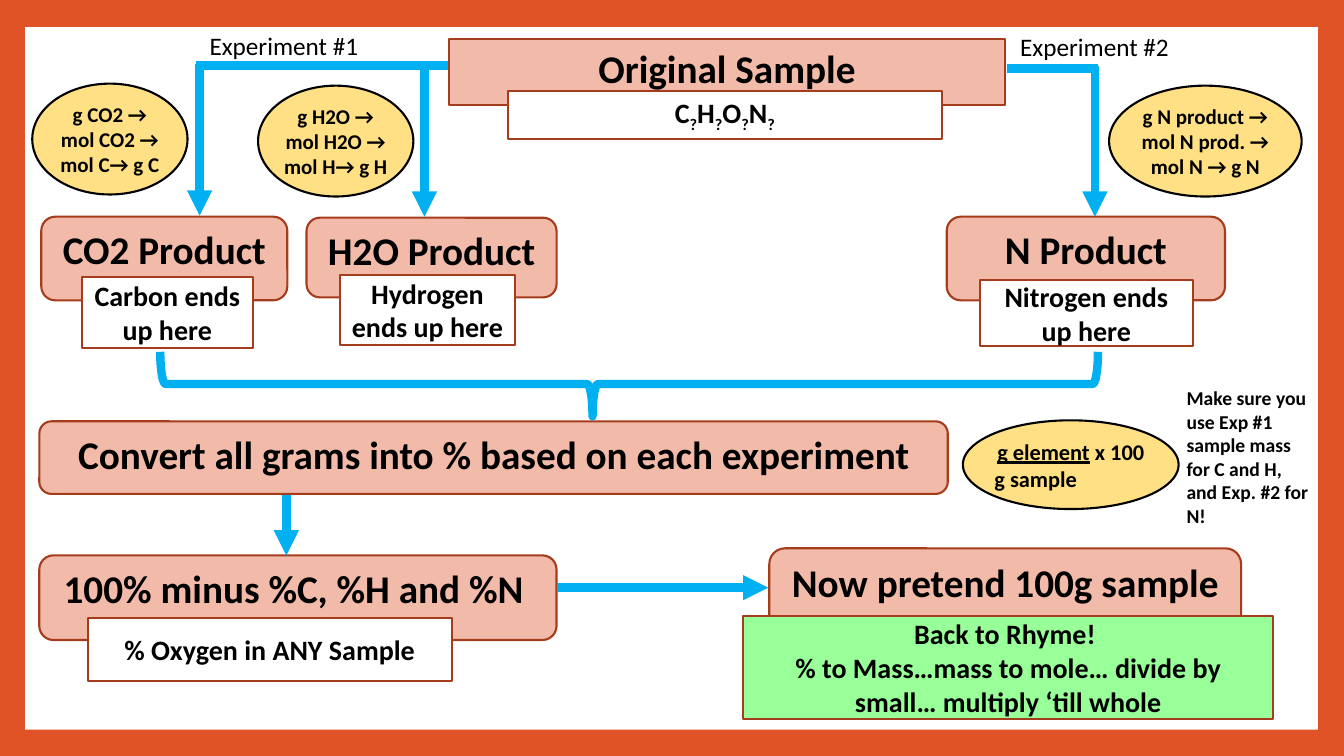
import dataclasses

import lxml.etree
import pptx
import pptx.dml.color
import pptx.enum.shapes
import pptx.enum.text
import pptx.oxml
import pptx.oxml.ns
import pptx.util

Inches = pptx.util.Inches
Pt = pptx.util.Pt
Kind = pptx.enum.shapes.MSO_SHAPE
Align = pptx.enum.text.PP_ALIGN
Anchor = pptx.enum.text.MSO_ANCHOR
Fit = pptx.enum.text.MSO_AUTO_SIZE
qn = pptx.oxml.ns.qn


@dataclasses.dataclass(frozen=True)
class Theme:
    font: str = "Calibri"
    frame: str = "DF5327"
    paper: str = "FFFFFF"
    step: str = "F2BAA9"
    edge: str = "A53D1D"
    hint: str = "FFE085"
    rhyme: str = "99FF99"
    flow: str = "00B0F0"
    ink: str = "000000"
    head: int = 28
    body: int = 20
    label: int = 18
    ratio: int = 16
    unit: int = 15
    note: int = 14
    thin: float = 1.5
    thick: float = 6


def rgb(code):
    return pptx.dml.color.RGBColor.from_string(code)


def write(shape, text, *, size, font, color, bold=True, align=Align.CENTER,
          anchor=Anchor.MIDDLE, inset=None, fit=Fit.NONE):
    """Text is a string, or a list of (alignment, [(words, mark), ...])."""
    frame = shape.text_frame
    frame.word_wrap, frame.auto_size = True, fit
    frame.vertical_anchor = anchor
    if inset is not None:
        frame.margin_left = frame.margin_right = Inches(inset)
        frame.margin_top = frame.margin_bottom = Inches(inset)
    if isinstance(text, str):
        text = [(align, [(line, "")]) for line in text.split("\n")]
    for row, (side, parts) in enumerate(text):
        para = frame.add_paragraph() if row else frame.paragraphs[0]
        para.alignment = side
        for words, mark in parts:
            run = para.add_run()
            run.text = words
            run.font.name, run.font.size = font, Pt(size)
            run.font.bold = bold
            run.font.color.rgb = rgb(color)
            if mark == "line":
                run.font.underline = True
            elif mark == "sub":
                run.font._element.set("baseline", "-25000")


class Chart:
    """Draws the flow chart's parts on one slide."""

    def __init__(self, slide, theme):
        self.slide, self.theme = slide, theme
        self.shapes = slide.shapes

    def text(self, shape, text, size, **form):
        write(shape, text, size=size, font=self.theme.font,
              color=self.theme.ink, **form)

    def paint(self, shape, fill, edge, width):
        if fill:
            shape.fill.solid()
            shape.fill.fore_color.rgb = rgb(fill)
        else:
            shape.fill.background()
        if edge:
            shape.line.color.rgb = rgb(edge)
            shape.line.width = Pt(width)
        else:
            shape.line.fill.background()

    def shape(self, kind, box, fill, edge=None, width=1.5):
        shape = self.shapes.add_shape(kind, *map(Inches, box))
        shape.shadow.inherit = False
        self.paint(shape, fill, edge, width)
        return shape

    def title(self, box, text):
        title = self.shapes.title
        title.left, title.top, title.width, title.height = map(Inches, box)
        geom = lxml.etree.SubElement(
            title._element.spPr, qn("a:prstGeom"), prst="roundRect")
        lxml.etree.SubElement(geom, qn("a:avLst"))
        self.paint(title, self.theme.step, self.theme.edge, self.theme.thin)
        self.text(title, text, self.theme.head, anchor=Anchor.TOP)
        self.shapes._spTree.append(title._element)  # in front of the panel

    def step(self, box, text):
        shape = self.shape(Kind.ROUNDED_RECTANGLE, box, self.theme.step,
                           self.theme.edge, self.theme.thin)
        self.text(shape, text, self.theme.head, anchor=Anchor.TOP)

    def card(self, box, text, fill=None):
        shape = self.shape(Kind.RECTANGLE, box, fill or self.theme.paper,
                           self.theme.edge, self.theme.thin)
        self.text(shape, text, self.theme.body)

    def hint(self, box, text, size):
        shape = self.shape(Kind.OVAL, box, self.theme.hint,
                           self.theme.ink, self.theme.thin)
        self.text(shape, text, size, inset=0)

    def label(self, box, text, size, bold=False):
        shape = self.shapes.add_textbox(*map(Inches, box))
        self.text(shape, text, size, bold=bold, align=Align.LEFT,
                  anchor=Anchor.TOP, fit=Fit.SHAPE_TO_FIT_TEXT)

    def line(self, ends, arrow=True):
        line = self.shapes.add_connector(
            pptx.enum.shapes.MSO_CONNECTOR.STRAIGHT, *map(Inches, ends))
        line.line.color.rgb = rgb(self.theme.flow)
        line.line.width = Pt(self.theme.thick)
        if arrow:
            lxml.etree.SubElement(line.line._get_or_add_ln(),
                                  qn("a:tailEnd"), type="triangle")
        lxml.etree.SubElement(line._element.spPr, qn("a:effectLst"))

    def brace(self, box, bend, tip):
        shape = self.shape(Kind.LEFT_BRACE, box, None,
                           self.theme.flow, self.theme.thick)
        shape.rotation = 270
        shape.adjustments[0], shape.adjustments[1] = bend, tip


def main():
    deck = pptx.Presentation()
    deck.slide_width, deck.slide_height = Inches(13.33), Inches(7.5)
    slide = deck.slides.add_slide(deck.slide_layouts[5])
    theme = Theme()
    chart = Chart(slide, theme)

    # Frame and white panel
    slide.background.fill.solid()
    slide.background.fill.fore_color.rgb = rgb(theme.frame)
    chart.shape(Kind.RECTANGLE, (0.25, 0.27, 12.82, 6.97), theme.paper)

    # Sample with its unknown formula
    chart.title((4.45, 0.39, 5.52, 0.65), "Original Sample")
    formula = [part for atom in "CHON" for part in ((atom, ""), ("?", "sub"))]
    chart.card((5.04, 0.9, 4.3, 0.48), [(Align.CENTER, formula)])

    # Steps, each with the card that overlaps it
    for box, text, spot, words, fill in (
        ((0.41, 2.15, 2.44, 0.83), "CO2 Product",
         (0.81, 2.75, 1.7, 0.7), "Carbon ends up here", theme.paper),
        ((3.04, 2.16, 2.48, 0.79), "H2O Product",
         (3.37, 2.73, 1.74, 0.69), "Hydrogen ends up here", theme.paper),
        ((9.39, 2.15, 2.76, 0.83), "N Product",
         (9.72, 2.78, 2.11, 0.65), "Nitrogen ends up here", theme.paper),
        ((0.39, 5.51, 5.13, 0.84), "100% minus %C, %H and %N ",
         (0.87, 6.13, 3.61, 0.63), "% Oxygen in ANY Sample", theme.paper),
        ((7.63, 5.44, 4.68, 0.93), "Now pretend 100g sample",
         (7.37, 6.11, 5.26, 1.02), "Back to Rhyme! \n% to Mass…mass to mole… "
         "divide by small… multiply ‘till whole", theme.rhyme),
    ):
        chart.step(box, text)
        chart.card(spot, words, fill)
    chart.step((0.39, 4.18, 9.01, 0.72),
               "Convert all grams into % based on each experiment")

    # Flow lines
    for ends in ((1.94, 0.65, 4.44, 0.65), (9.99, 0.68, 10.89, 0.68)):
        chart.line(ends, arrow=False)
    for ends in ((1.98, 0.64, 1.98, 2.14), (4.21, 0.65, 4.21, 2.15),
                 (10.86, 0.65, 10.86, 2.15), (2.84, 4.91, 2.84, 5.51),
                 (5.52, 5.83, 7.62, 5.83)):
        chart.line(ends)
    chart.brace((5.92, -0.84, 0.64, 9.3), 0.083, 0.461)

    # Labels and side note
    chart.label((1.98, 0.25, 2.43, 0.4), "Experiment #1", theme.label)
    chart.label((10.02, 0.26, 2.23, 0.4), "Experiment #2", theme.label)
    chart.label((11.67, 3.78, 1.46, 1.51), "Make sure you use Exp #1 sample "
                "mass for C and H, and Exp. #2 for N!", theme.note, bold=True)

    # Conversion hints
    chart.hint((9.55, 4.17, 2.14, 0.88),
               [(Align.CENTER, [("g element", "line"), (" x 100", "")]),
                (Align.LEFT, [("g sample", "")])], theme.ratio)
    for box, text in (
        ((11, 0.85, 1.91, 1.1), "g N product → mol N prod. → mol N → g N"),
        ((2.56, 0.85, 1.54, 1.1), "g H2O → mol H2O → mol H→ g H"),
        ((0.32, 0.83, 1.54, 1.1), "g CO2 → mol CO2 → mol C→ g C"),
    ):
        chart.hint(box, text, theme.unit)

    deck.save("out.pptx")


if __name__ == "__main__":
    main()
